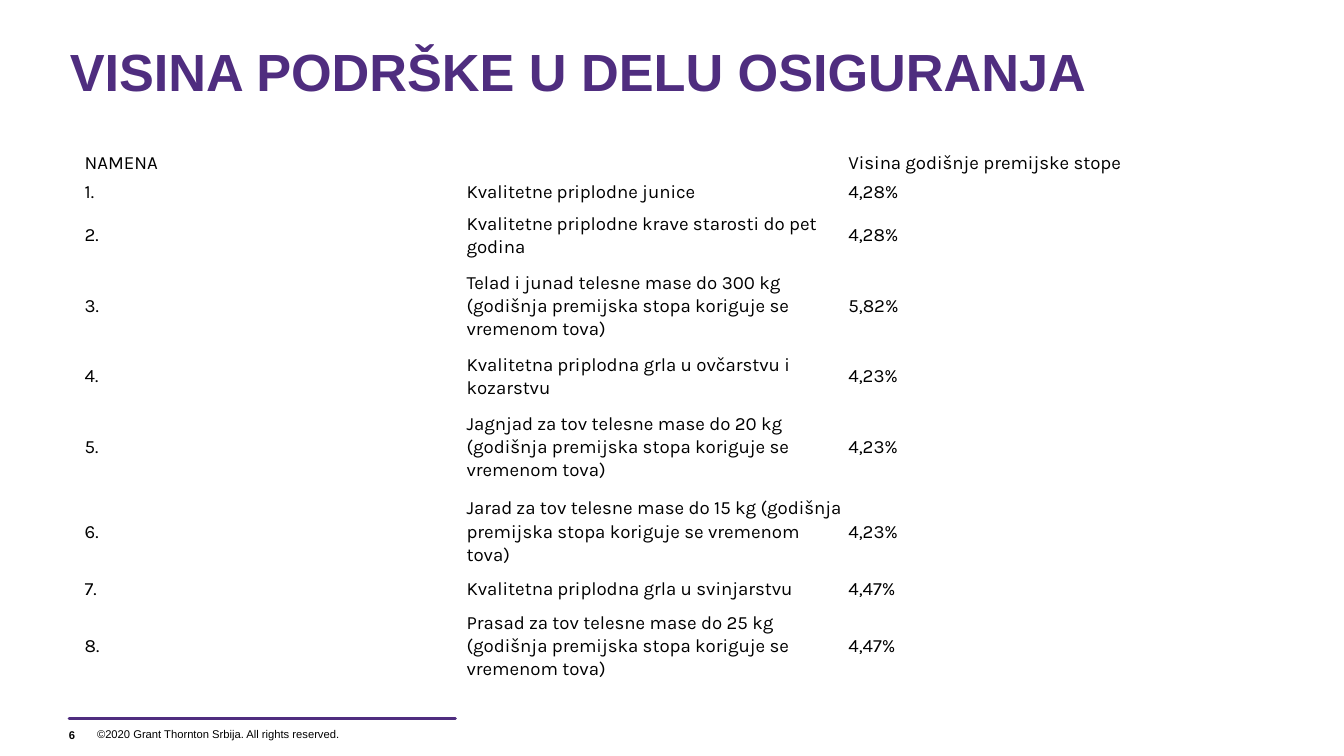
from lxml import etree
from pptx import Presentation
from pptx import util as u
from pptx.dml.color import RGBColor
from pptx.enum import shapes, text
from pptx.oxml.ns import qn

PURPLE = RGBColor(0x4F, 0x2D, 0x7F)
BLACK = RGBColor(0, 0, 0)

COL_WIDTH = 204.6
ROW_HEIGHTS = {1: 15.8, 2: 30.2, 3: 45.4}  # by number of text lines
CELL_INSET = 0.7

HEADER = ("NAMENA", "Visina godišnje premijske stope")
# purpose, yearly premium rate, text lines
RATES = [
    ("Kvalitetne priplodne junice", "4,28%", 1),
    ("Kvalitetne priplodne krave starosti do pet godina", "4,28%", 2),
    ("Telad i junad telesne mase do 300 kg (godišnja premijska stopa "
     "koriguje se vremenom tova)", "5,82%", 3),
    ("Kvalitetna priplodna grla u ovčarstvu i kozarstvu", "4,23%", 2),
    ("Jagnjad za tov telesne mase do 20 kg (godišnja premijska stopa "
     "koriguje se vremenom tova)", "4,23%", 3),
    ("Jarad za tov telesne mase do 15 kg (godišnja premijska stopa "
     "koriguje se vremenom tova)", "4,23%", 3),
    ("Kvalitetna priplodna grla u svinjarstvu", "4,47%", 1),
    ("Prasad za tov telesne mase do 25 kg (godišnja premijska stopa "
     "koriguje se vremenom tova)", "4,47%", 3),
]


def set_all(obj, values):
    for name, value in values.items():
        setattr(obj, name, value)


def add_run(p, content, size, color, font="Arial", bold=False):
    r = p.add_run()
    r.text = content
    set_all(r.font, {"name": font, "size": u.Pt(size), "bold": bold})
    r.font.color.rgb = color


def fill_frame(tf, content, size, color, anchor, pad=0, bold=False):
    set_all(tf, {"word_wrap": True, "auto_size": text.MSO_AUTO_SIZE.NONE,
                 "vertical_anchor": anchor,
                 "margin_left": 0, "margin_right": 0,
                 "margin_top": u.Pt(pad), "margin_bottom": u.Pt(pad)})
    p = tf.paragraphs[0]
    p.alignment = text.PP_ALIGN.LEFT
    add_run(p, content, size, color, bold=bold)


def add_title(s, content):
    sp = s.shapes.title
    set_all(sp, {"left": u.Pt(37.4), "top": u.Pt(21),
                 "width": u.Pt(656.6), "height": u.Pt(31)})
    fill_frame(sp.text_frame, content, 28, PURPLE,
               text.MSO_ANCHOR.TOP, bold=True)


def add_label(s, content, x, y, w, h, **style):
    sp = s.shapes.add_textbox(u.Pt(x), u.Pt(y), u.Pt(w), u.Pt(h))
    fill_frame(sp.text_frame, content, 6, BLACK,
               text.MSO_ANCHOR.MIDDLE, **style)


def add_rule(s, x1, x2, y):
    line = s.shapes.add_connector(shapes.MSO_CONNECTOR.STRAIGHT,
                                  u.Pt(x1), u.Pt(y), u.Pt(x2), u.Pt(y))
    line.line.color.rgb = PURPLE
    line.line.width = u.Pt(1.5)
    line.line._get_or_add_ln().set("cap", "rnd")
    etree.SubElement(line._element.spPr, qn("a:effectLst"))


def fill_cell(cell, content):
    cell.fill.background()
    cell.vertical_anchor = text.MSO_ANCHOR.MIDDLE
    set_all(cell, {f"margin_{side}": u.Pt(CELL_INSET)
                   for side in ("left", "right", "top", "bottom")})
    p = cell.text_frame.paragraphs[0]
    set_all(p, {"line_spacing": 1.07, "space_after": u.Pt(8)})
    # A non-breaking space is set in its own font
    for part in content.partition(" "):
        if part:
            font, size = ("Roboto", 9) if part == " " else ("Karla", 10)
            add_run(p, part, size, BLACK, font)


def add_rate_table(s, x, y):
    rows = [(HEADER[0], "", HEADER[1])]
    rows += [(f"{i}.", name, rate)
             for i, (name, rate, _) in enumerate(RATES, 1)]
    heights = [ROW_HEIGHTS[n] for n in [1] + [rate[2] for rate in RATES]]
    tbl = s.shapes.add_table(len(rows), 3, u.Pt(x), u.Pt(y),
                             u.Pt(3 * COL_WIDTH), u.Pt(sum(heights))).table
    set_all(tbl, {"first_row": False, "horz_banding": False})
    for col in tbl.columns:
        col.width = u.Pt(COL_WIDTH)
    for i, (row, height) in enumerate(zip(rows, heights)):
        tbl.rows[i].height = u.Pt(height)
        for j, content in enumerate(row):
            fill_cell(tbl.cell(i, j), content)
    tbl.cell(0, 0).merge(tbl.cell(0, 1))


def main():
    prs = Presentation()
    set_all(prs, {"slide_width": u.Pt(720), "slide_height": u.Pt(405)})
    s = prs.slides.add_slide(prs.slide_layouts[5])

    # Footer
    add_label(s, "©2020 Grant Thornton Srbija. All rights reserved.",
              52, 386, 190, 14.4, pad=3.6)
    add_rule(s, 37, 244, 385)
    add_label(s, "6", 37, 386.6, 14.4, 14.4, bold=True)

    # Title and premium rates
    add_title(s, "VISINA PODRŠKE U DELU OSIGURANJA")
    add_rate_table(s, 44.7, 79.2)

    prs.save("out.pptx")


if __name__ == "__main__":
    main()
